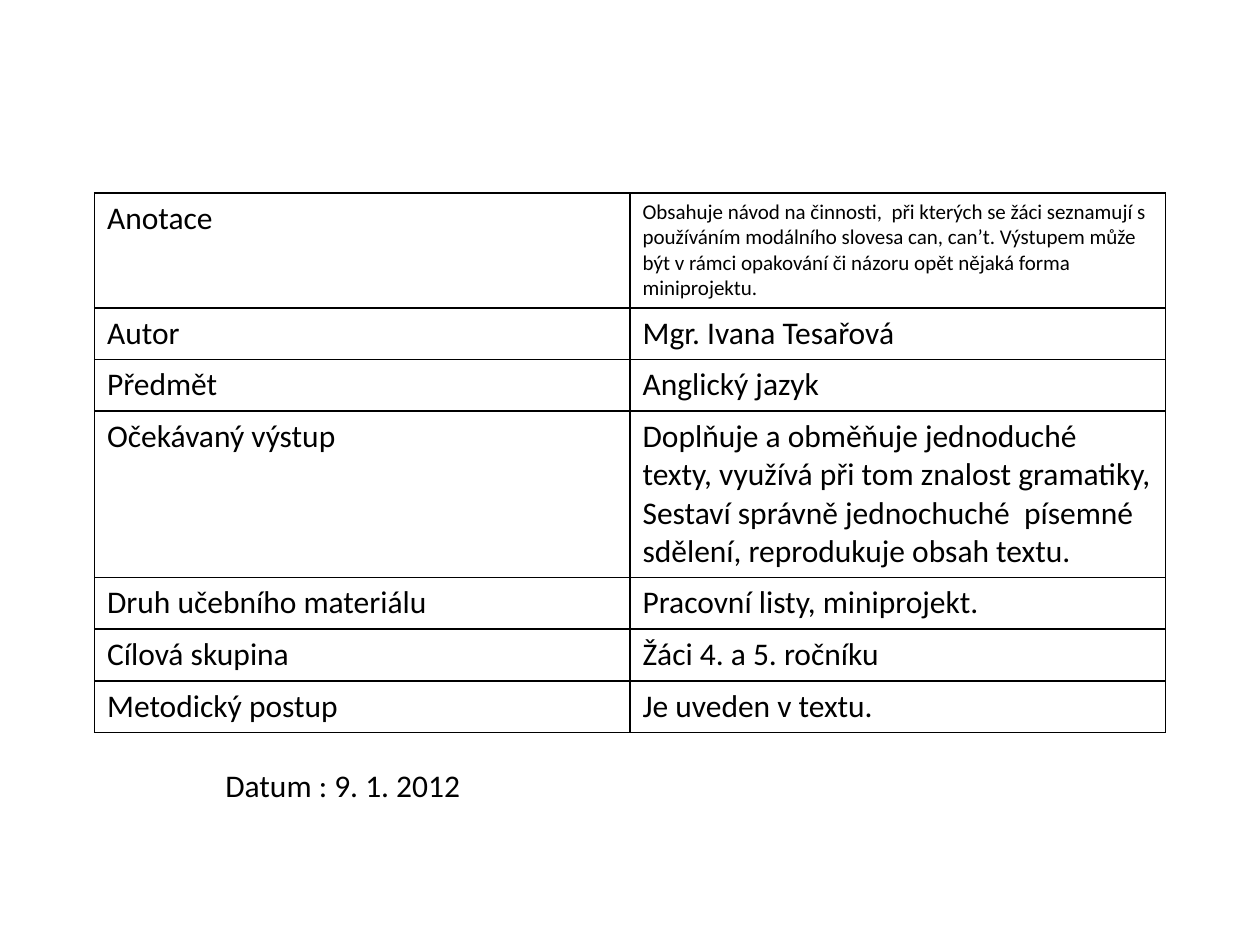
from dataclasses import dataclass

from lxml.etree import SubElement
from pptx import Presentation
from pptx.dml.color import RGBColor
from pptx.enum.text import MSO_AUTO_SIZE
from pptx.oxml.ns import qn
from pptx.util import Inches, Pt


@dataclass(frozen=True)
class Theme:
    font: str = "Calibri"
    ink: str = "000000"
    body_size: int = 18
    small_size: int = 12
    border_width: int = 1


THEME = Theme()
SLIDE_WIDTH, SLIDE_HEIGHT = Inches(10), Inches(7.5)
MARGIN = Inches(0.75)
TABLE_TOP = Inches(1.53)
ROW_HEIGHT = Inches(0.41)

ANNOTATION = (
    "Obsahuje návod na činnosti,  při kterých se žáci seznamují s používáním "
    "modálního slovesa can, can’t. Výstupem může být v rámci opakování či "
    "názoru opět nějaká forma miniprojektu."
)
EXPECTED_OUTCOME = (
    "Doplňuje a obměňuje jednoduché texty, využívá při tom znalost gramatiky,\n"
    "Sestaví správně jednochuché  písemné sdělení, reprodukuje obsah textu."
)
# Label, description, type size of the description
LESSON_ROWS = [
    ("Anotace", ANNOTATION, THEME.small_size),
    ("Autor", "Mgr. Ivana Tesařová", THEME.body_size),
    ("Předmět", "Anglický jazyk", THEME.body_size),
    ("Očekávaný výstup", EXPECTED_OUTCOME, THEME.body_size),
    ("Druh učebního materiálu", "Pracovní listy, miniprojekt.", THEME.body_size),
    ("Cílová skupina", "Žáci 4. a 5. ročníku", THEME.body_size),
    ("Metodický postup", "Je uveden v textu.", THEME.body_size),
]


def write_text(text_frame, text, size=THEME.body_size):
    text_frame.text = text
    font_format = {"name": THEME.font, "size": Pt(size), "bold": False}
    for paragraph in text_frame.paragraphs:
        for run in paragraph.runs:
            for attribute, value in font_format.items():
                setattr(run.font, attribute, value)
            run.font.color.rgb = RGBColor.from_string(THEME.ink)


def add_borders(cell):
    """Draw all four sides; call before filling, as lines precede the fill."""
    properties = cell._tc.get_or_add_tcPr()
    for side in ("a:lnL", "a:lnR", "a:lnT", "a:lnB"):
        line = SubElement(properties, qn(side), w=str(Pt(THEME.border_width)))
        fill = SubElement(line, qn("a:solidFill"))
        SubElement(fill, qn("a:srgbClr"), val=THEME.ink)


def add_lesson_table(slide):
    frame = slide.shapes.add_table(
        len(LESSON_ROWS), 2, MARGIN, TABLE_TOP,
        SLIDE_WIDTH - 2 * MARGIN, ROW_HEIGHT * len(LESSON_ROWS),
    )
    table = frame.table
    table.first_row = table.horz_banding = False
    for row, (label, description, size) in zip(table.rows, LESSON_ROWS):
        label_cell, description_cell = row.cells
        write_text(label_cell.text_frame, label)
        write_text(description_cell.text_frame, description, size)
        for cell in (label_cell, description_cell):
            add_borders(cell)
            cell.fill.background()


def add_date(slide):
    box = slide.shapes.add_textbox(
        Inches(1.69), Inches(6.03), Inches(2.09), Inches(0.4)
    )
    box.text_frame.word_wrap = False
    box.text_frame.auto_size = MSO_AUTO_SIZE.SHAPE_TO_FIT_TEXT
    write_text(box.text_frame, "Datum : 9. 1. 2012")


def main():
    presentation = Presentation()
    presentation.slide_width = SLIDE_WIDTH
    presentation.slide_height = SLIDE_HEIGHT
    blank_layout = presentation.slide_layouts[6]
    slide = presentation.slides.add_slide(blank_layout)
    add_lesson_table(slide)
    add_date(slide)
    presentation.save("out.pptx")


if __name__ == "__main__":
    main()
